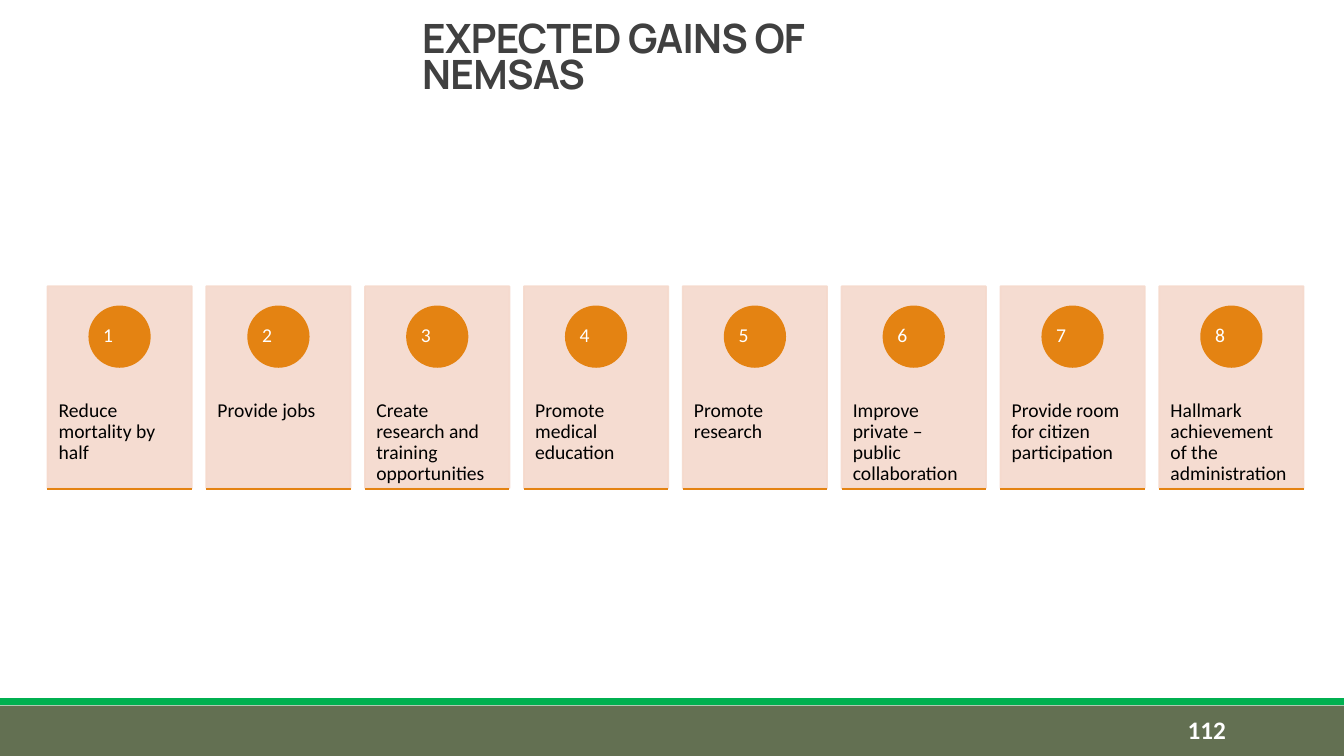
from lxml import etree
from pptx import Presentation
from pptx.dml.color import RGBColor
from pptx.enum.shapes import MSO_CONNECTOR, MSO_SHAPE
from pptx.enum.text import MSO_ANCHOR as ANCHOR, PP_ALIGN as ALIGN
from pptx.oxml.ns import qn
from pptx.util import Pt

WHITE = RGBColor(0xFF, 0xFF, 0xFF)
BLACK = RGBColor(0x00, 0x00, 0x00)
GREY = RGBColor(0x40, 0x40, 0x40)
OLIVE = RGBColor(0x63, 0x70, 0x52)
GREEN = RGBColor(0x00, 0xB0, 0x50)
ORANGE = RGBColor(0xE4, 0x83, 0x12)
PINK = RGBColor(0xF5, 0xD9, 0xCC)

SLIDE_W, SLIDE_H = 960, 540
CARD_LEFT, CARD_TOP, CARD_W, CARD_H = 33.9, 204.5, 103.1, 144.2
CARD_PITCH = 113.45
BADGE_TOP, BADGE_SIZE = 218.9, 43.2
LINE_W = 1.25

GAINS = [
    "Reduce mortality by half",
    "Provide jobs",
    "Create research and training opportunities",
    "Promote medical education",
    "Promote research",
    "Improve private – public collaboration",
    "Provide room for citizen participation",
    "Hallmark achievement of the administration",
]

TITLE_FONT = {"name": "Manrope", "size": Pt(28.8), "bold": True}
NUMBER_FONT = {"name": "Calibri", "size": Pt(18), "bold": True}
BODY_FONT = {"name": "Calibri", "size": Pt(14)}


def write(sp, text, font, color, anchor=ANCHOR.TOP, align=ALIGN.LEFT,
          spacing=1.0, insets=(7.2, 3.6, 7.2, 3.6)):
    """Fill a shape with one paragraph; insets run left, top, right, bottom."""
    tf = sp.text_frame
    tf.word_wrap = True
    tf.vertical_anchor = anchor
    for side, inset in zip(("left", "top", "right", "bottom"), insets):
        setattr(tf, f"margin_{side}", Pt(inset))
    p = tf.paragraphs[0]
    p.alignment = align
    p.line_spacing = spacing
    r = p.add_run()
    r.text = text
    for name, value in font.items():
        setattr(r.font, name, value)
    r.font.color.rgb = color
    return r


def add_text(s, box, *args, **kwargs):
    return write(s.shapes.add_textbox(*map(Pt, box)), *args, **kwargs)


def add_block(s, kind, box, color, outlined=False):
    sp = s.shapes.add_shape(kind, *map(Pt, box))
    sp.shadow.inherit = False
    sp.fill.solid()
    sp.fill.fore_color.rgb = color
    if outlined:
        sp.line.color.rgb = color
        sp.line.width = Pt(LINE_W)
    else:
        sp.line.fill.background()
    return sp


def set_opacity(sp, percent):
    for clr in sp._element.spPr.iter(qn("a:srgbClr")):
        etree.SubElement(clr, qn("a:alpha")).set("val", str(percent * 1000))


def add_rule(s, left, top, width, color):
    line = s.shapes.add_connector(
        MSO_CONNECTOR.STRAIGHT, Pt(left), Pt(top), Pt(left + width), Pt(top))
    line.line.color.rgb = color
    line.line.width = Pt(LINE_W)
    etree.SubElement(line._element.spPr, qn("a:effectLst"))


def add_gain_card(s, left, number, text):
    card = add_block(s, MSO_SHAPE.RECTANGLE,
                     (left, CARD_TOP, CARD_W, CARD_H), PINK, outlined=True)
    set_opacity(card, 90)
    write(card, text, BODY_FONT, BLACK, spacing=0.9, insets=(8, 81.4, 8, 0))

    badge_left = left + (CARD_W - BADGE_SIZE) / 2
    badge = add_block(s, MSO_SHAPE.OVAL,
                      (badge_left, BADGE_TOP, BADGE_SIZE, BADGE_SIZE),
                      ORANGE, outlined=True)
    write(badge, str(number), BODY_FONT, WHITE, anchor=ANCHOR.MIDDLE,
          spacing=0.9, insets=(3.6, 0.7, 3.6, 0.7))
    add_rule(s, left, CARD_TOP + CARD_H + 0.4, CARD_W, ORANGE)


def main():
    prs = Presentation()
    prs.slide_width, prs.slide_height = Pt(SLIDE_W), Pt(SLIDE_H)
    s = prs.slides.add_slide(prs.slide_layouts[6])

    add_block(s, MSO_SHAPE.RECTANGLE, (0, 504, SLIDE_W, 36), OLIVE)
    add_block(s, MSO_SHAPE.RECTANGLE, (0, 498.7, SLIDE_W, 5), GREEN)

    title = add_text(s, (294.5, 13.7, 377.3, 61.9), "EXPECTED GAINS OF NEMSAS",
                     TITLE_FONT, GREY, spacing=0.75)
    title.font._element.set("spc", "-50")

    for i, gain in enumerate(GAINS):
        add_gain_card(s, CARD_LEFT + i * CARD_PITCH, i + 1, gain)

    add_text(s, (779.8, 506.9, 103, 28.8), "112", NUMBER_FONT, WHITE,
             anchor=ANCHOR.MIDDLE, align=ALIGN.RIGHT)
    prs.save("out.pptx")


if __name__ == "__main__":
    main()
